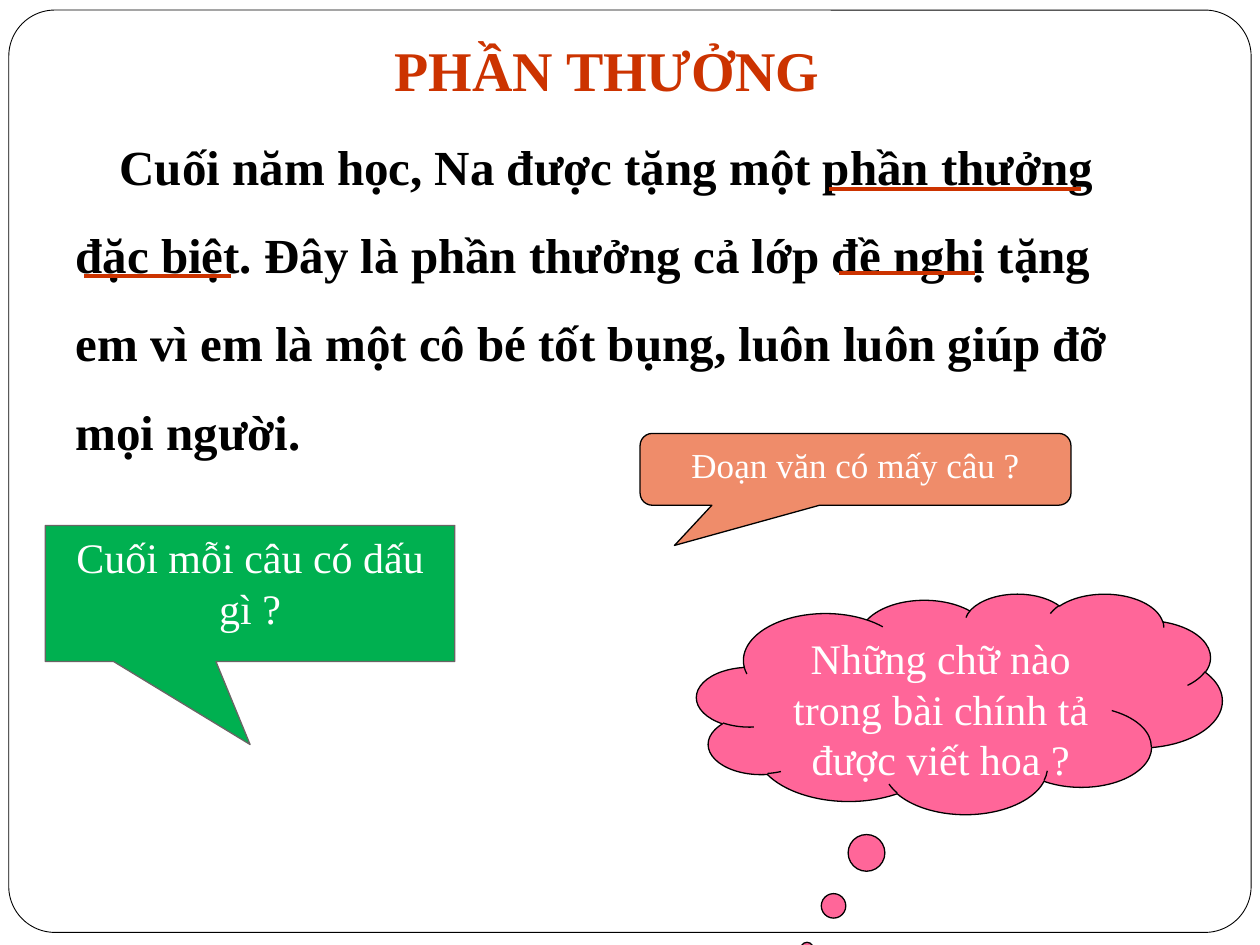
from dataclasses import dataclass

from pptx import Presentation
from pptx.dml.color import RGBColor
from pptx.enum.shapes import MSO_CONNECTOR, MSO_SHAPE
from pptx.enum.text import MSO_ANCHOR, MSO_AUTO_SIZE, PP_ALIGN
from pptx.oxml.ns import qn
from pptx.util import Inches, Pt
from lxml.etree import SubElement

COLS, ROWS = 100, 75
FONT = "Times New Roman"
COLORS = {
    "white": "FFFFFF", "black": "000000", "red": "CC3300", "pink": "FF6699",
    "orange": "EF8C6A", "green": "00B050", "gray": "696464",
}


@dataclass
class Box:
    """A place on the grid, in columns and rows."""
    col: float
    row: float
    cols: float
    rows: float


@dataclass
class Callout:
    kind: MSO_SHAPE
    box: Box
    adjustments: tuple[float, ...]
    fill: str
    line: str
    text: str
    size: int


@dataclass
class Underline:
    start: float
    end: float
    row: float


CALLOUTS = [
    Callout(MSO_SHAPE.CLOUD_CALLOUT, Box(55.3, 47.1, 41.7, 17.5), (-0.29, 1.11),
            "pink", "black", "Những chữ nào trong bài chính tả được viết hoa ?", 24),
    Callout(MSO_SHAPE.ROUNDED_RECTANGULAR_CALLOUT, Box(50.8, 34.4, 34.2, 5.7),
            (-0.42, 1.06, 0.17), "orange", "black", "Đoạn văn có mấy câu ?", 20),
    Callout(MSO_SHAPE.RECTANGULAR_CALLOUT, Box(3.6, 41.7, 32.5, 10.8), (0, 1.11),
            "green", "gray", "Cuối mỗi câu có dấu gì ?", 24),
]
UNDERLINES = [
    Underline(65.8, 85.8, 15), Underline(6.7, 18.3, 21.9), Underline(66.6, 77.4, 21.7),
]

prs = Presentation()
prs.slide_width, prs.slide_height = Inches(10), Inches(7.5)


def x(cols: float) -> int:
    return round(prs.slide_width * cols / COLS)


def y(rows: float) -> int:
    return round(prs.slide_height * rows / ROWS)


def place(box: Box) -> tuple[int, int, int, int]:
    return x(box.col), y(box.row), x(box.cols), y(box.rows)


def color(name: str) -> RGBColor:
    return RGBColor.from_string(COLORS[name])


def write(sp, text: str, size: int, name: str, bold: bool = False,
          align: PP_ALIGN = PP_ALIGN.LEFT):
    """Fill a shape with one top-anchored paragraph and return it."""
    tf = sp.text_frame
    tf.word_wrap = True
    tf.vertical_anchor = MSO_ANCHOR.TOP
    p = tf.paragraphs[0]
    p.alignment = align
    r = p.add_run()
    r.text = text
    r.font.name, r.font.size, r.font.bold = FONT, Pt(size), bold
    r.font.color.rgb = color(name)
    return p


def add_shape(s, kind: MSO_SHAPE, box: Box, adjustments: tuple[float, ...],
              fill: str, line: str, width: float):
    sp = s.shapes.add_shape(kind, *place(box))
    for i, value in enumerate(adjustments):
        sp.adjustments[i] = value
    sp.shadow.inherit = False
    sp.fill.solid()
    sp.fill.fore_color.rgb = color(fill)
    sp.line.color.rgb = color(line)
    sp.line.width = Pt(width)
    return sp


def add_callout(s, c: Callout) -> None:
    sp = add_shape(s, c.kind, c.box, c.adjustments, c.fill, c.line, 0.75)
    write(sp, c.text, c.size, "white", align=PP_ALIGN.CENTER)


def add_underline(s, u: Underline) -> None:
    line = s.shapes.add_connector(
        MSO_CONNECTOR.STRAIGHT, x(u.start), y(u.row), x(u.end), y(u.row))
    line.line.color.rgb = color("red")
    line.line.width = Pt(2.25)
    SubElement(line._element.spPr, qn("a:effectLst"))


def add_title(s) -> None:
    title = s.shapes.title
    title.left, title.top, title.width, title.height = place(Box(30.3, 2.3, 45.8, 6.4))
    write(title, "PHẦN THƯỞNG", 32, "red", bold=True)
    title.text_frame.auto_size = MSO_AUTO_SIZE.SHAPE_TO_FIT_TEXT


def add_passage(s) -> None:
    sp = s.shapes.add_textbox(*place(Box(5, 8, 87.5, 29.3)))
    p = write(sp, "Cuối năm học, Na được tặng một phần thưởng đặc biệt. "
                  "Đây là phần thưởng cả lớp đề nghị tặng em vì em là một cô bé "
                  "tốt bụng, luôn luôn giúp đỡ mọi người.", 28, "black", bold=True)
    p.line_spacing = 1.5
    p._p.get_or_add_pPr().set("indent", str(x(3.5)))
    sp.text_frame.auto_size = MSO_AUTO_SIZE.SHAPE_TO_FIT_TEXT


def main() -> None:
    s = prs.slides.add_slide(prs.slide_layouts[5])
    frame = add_shape(s, MSO_SHAPE.ROUNDED_RECTANGLE, Box(0.7, 0.8, 98.6, 73.2),
                      (0.05,), "white", "black", 0.5)
    s.shapes.title._element.addprevious(frame._element)
    add_title(s)
    add_passage(s)
    for c in CALLOUTS:
        add_callout(s, c)
    for u in UNDERLINES:
        add_underline(s, u)
    prs.save("out.pptx")


if __name__ == "__main__":
    main()
